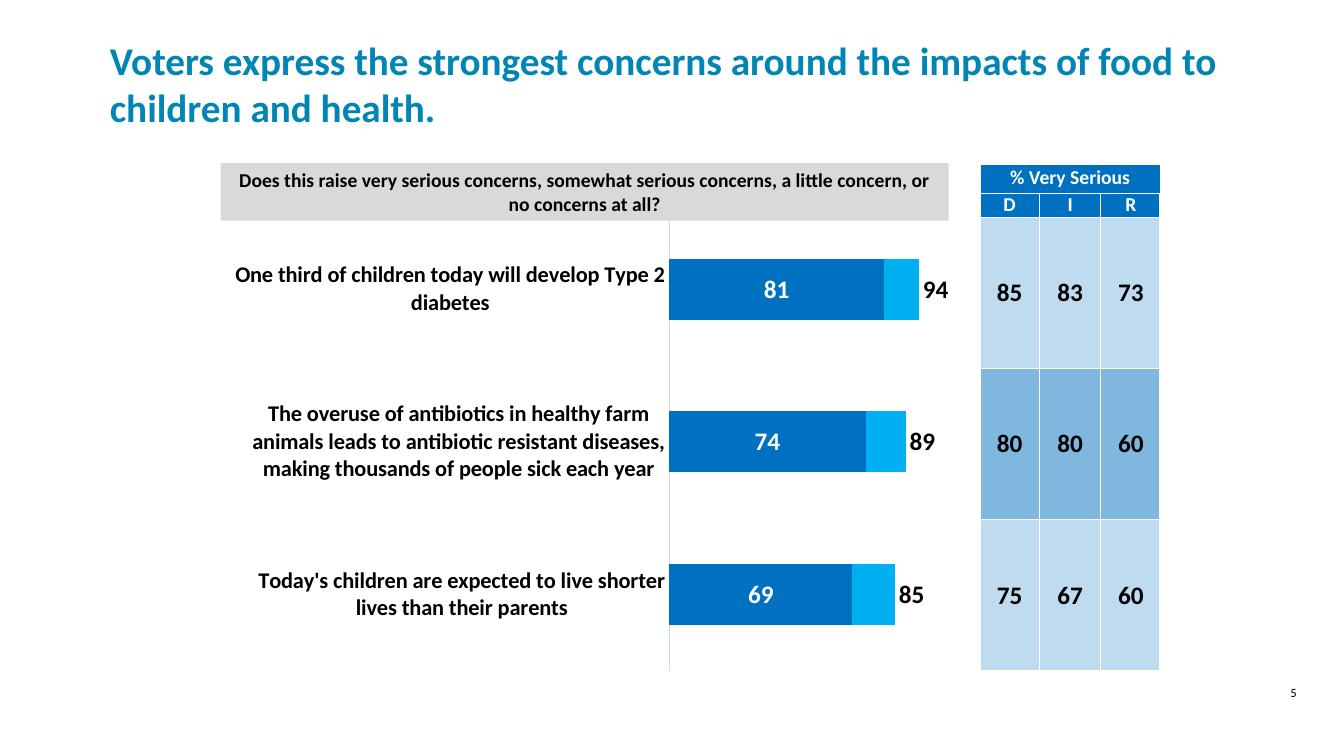
import lxml.etree
import pptx
import pptx.chart.data
import pptx.dml.color
import pptx.enum.chart
import pptx.enum.shapes
import pptx.enum.text
import pptx.oxml
import pptx.oxml.ns
import pptx.util

Pt = pptx.util.Pt
RGBColor = pptx.dml.color.RGBColor
ALIGN = pptx.enum.text.PP_ALIGN
ANCHOR = pptx.enum.text.MSO_ANCHOR
LABEL_POSITION = pptx.enum.chart.XL_LABEL_POSITION
qn = pptx.oxml.ns.qn

FONT = "Calibri"
TITLE_BLUE = RGBColor(0x00, 0x85, 0xB4)
DARK_BLUE = RGBColor(0x00, 0x70, 0xC0)
LIGHT_BLUE = RGBColor(0x00, 0xB0, 0xF0)
GREY = RGBColor(0xD9, 0xD9, 0xD9)
BLACK = RGBColor(0x00, 0x00, 0x00)
WHITE = RGBColor(0xFF, 0xFF, 0xFF)


def write(frame, text, size, color=BLACK, bold=True, align=ALIGN.CENTER, anchor=ANCHOR.MIDDLE):
    frame.word_wrap = True
    frame.auto_size = pptx.enum.text.MSO_AUTO_SIZE.NONE
    frame.vertical_anchor = anchor
    paragraph = frame.paragraphs[0]
    paragraph.alignment = align
    run = paragraph.add_run()
    run.text = text
    style_font(run.font, size, color, bold)


def style_font(font, size, color=BLACK, bold=True):
    font.name = FONT
    font.size = Pt(size)
    font.bold = bold
    font.color.rgb = color


presentation = pptx.Presentation()
presentation.slide_width = Pt(960)
presentation.slide_height = Pt(540)
slide = presentation.slides.add_slide(presentation.slide_layouts[5])

# Title and page number
title = slide.shapes.title
title.left, title.top, title.width, title.height = Pt(71.3), Pt(18), Pt(818), Pt(83.5)
write(title.text_frame,
      "Voters express the strongest concerns around the impacts of food to children and health.",
      28, color=TITLE_BLUE, align=ALIGN.LEFT)

page_number = slide.shapes.add_textbox(Pt(888), Pt(486), Pt(72), Pt(24))
write(page_number.text_frame, "5", 9, bold=False, anchor=ANCHOR.TOP)

# Survey question
question = slide.shapes.add_shape(pptx.enum.shapes.MSO_SHAPE.RECTANGLE,
                                  Pt(157.7), Pt(116.6), Pt(520), Pt(41))
question.shadow.inherit = False
question.fill.solid()
question.fill.fore_color.rgb = GREY
question.line.fill.background()
write(question.text_frame,
      "Does this raise very serious concerns, somewhat serious concerns, "
      "a little concern, or no concerns at all?", 14)

# Stacked bars: very serious, somewhat serious, and an unseen series for the totals
concerns = pptx.chart.data.CategoryChartData()
concerns.categories = [
    "Today's children are expected to live shorter lives than their parents",
    "The overuse of antibiotics in healthy farm animals leads to antibiotic resistant "
    "diseases, making thousands of people sick each year",
    "One third of children today will develop Type 2 diabetes",
]
concerns.add_series("Series 1", (69, 74, 81))
concerns.add_series("Series 2", (16, 15, 13))
concerns.add_series("Series 3", (85, 89, 94))
chart = slide.shapes.add_chart(pptx.enum.chart.XL_CHART_TYPE.BAR_STACKED,
                               Pt(157.7), Pt(145.4), Pt(520), Pt(340.6), concerns).chart
chart.has_legend = False
chart.has_title = False
style_font(chart.font, 10, bold=False)

value_axis = chart.value_axis
value_axis.minimum_scale = 0
value_axis.maximum_scale = 100
value_axis.has_major_gridlines = False
value_axis.visible = False

concern_axis = chart.category_axis
concern_axis.major_tick_mark = pptx.enum.chart.XL_TICK_MARK.NONE
concern_axis.format.line.color.rgb = GREY
concern_axis.format.line.width = Pt(0.75)
style_font(concern_axis.tick_labels.font, 16)

bars = chart.plots[0]
bars.gap_width = 150
bars.overlap = 100
bars.vary_by_categories = False
bar_formats = [
    (DARK_BLUE, WHITE, LABEL_POSITION.CENTER),
    (LIGHT_BLUE, None, None),
    (WHITE, BLACK, LABEL_POSITION.INSIDE_BASE),
]
for series, (bar_color, label_color, position) in zip(bars.series, bar_formats):
    series.format.fill.solid()
    series.format.fill.fore_color.rgb = bar_color
    if label_color is not None:
        labels = series.data_labels
        labels.show_value = True
        labels.position = position
        style_font(labels.font, 18, label_color)

plot_area = bars._element.getparent()
for old_layout in plot_area.findall(qn("c:layout")):
    plot_area.remove(old_layout)
plot_area.insert(0, pptx.oxml.parse_xml(
    f'<c:layout {pptx.oxml.ns.nsdecls("c")}><c:manualLayout>'
    '<c:layoutTarget val="inner"/><c:xMode val="edge"/><c:yMode val="edge"/>'
    '<c:x val="0.616"/><c:y val="0.02"/><c:w val="0.365"/><c:h val="0.96"/>'
    '</c:manualLayout></c:layout>'))

# Very serious share by party
party_rows = [
    ("% Very Serious", "", ""),
    ("D", "I", "R"),
    ("85", "83", "73"),
    ("80", "80", "60"),
    ("75", "67", "60"),
]
row_heights = [21.4, 17.3, 108, 108, 108]
row_opacity = [100, 100, 25, 50, 25]
party_table = slide.shapes.add_table(5, 3, Pt(699.5), Pt(116.6), Pt(129.9), Pt(362.7)).table
for column in party_table.columns:
    column.width = Pt(43.3)
for r, (shares, height, opacity) in enumerate(zip(party_rows, row_heights, row_opacity)):
    party_table.rows[r].height = Pt(height)
    is_header = r < 2
    for c, share in enumerate(shares):
        cell = party_table.cell(r, c)
        cell.margin_left = cell.margin_right = cell.margin_top = cell.margin_bottom = 0
        cell.vertical_anchor = ANCHOR.MIDDLE
        if share:
            write(cell.text_frame, share, 14 if is_header else 18, WHITE if is_header else BLACK)
        cell_format = cell._tc.get_or_add_tcPr()
        edge_widths = {"L": 3 if c == 0 else 1, "R": 3 if c == 2 else 1,
                       "T": 3 if r == 0 else 1, "B": 1}
        for edge, width in edge_widths.items():
            border = lxml.etree.SubElement(cell_format, qn(f"a:ln{edge}"), w=str(Pt(width)))
            border_fill = lxml.etree.SubElement(border, qn("a:solidFill"))
            lxml.etree.SubElement(border_fill, qn("a:srgbClr"), val=str(WHITE))
        cell.fill.solid()
        cell.fill.fore_color.rgb = DARK_BLUE
        if opacity < 100:
            fill_color = cell_format.find(qn("a:solidFill")).find(qn("a:srgbClr"))
            lxml.etree.SubElement(fill_color, qn("a:alpha"), val=str(opacity * 1000))
party_table.cell(0, 0).merge(party_table.cell(0, 2))

presentation.save("out.pptx")
